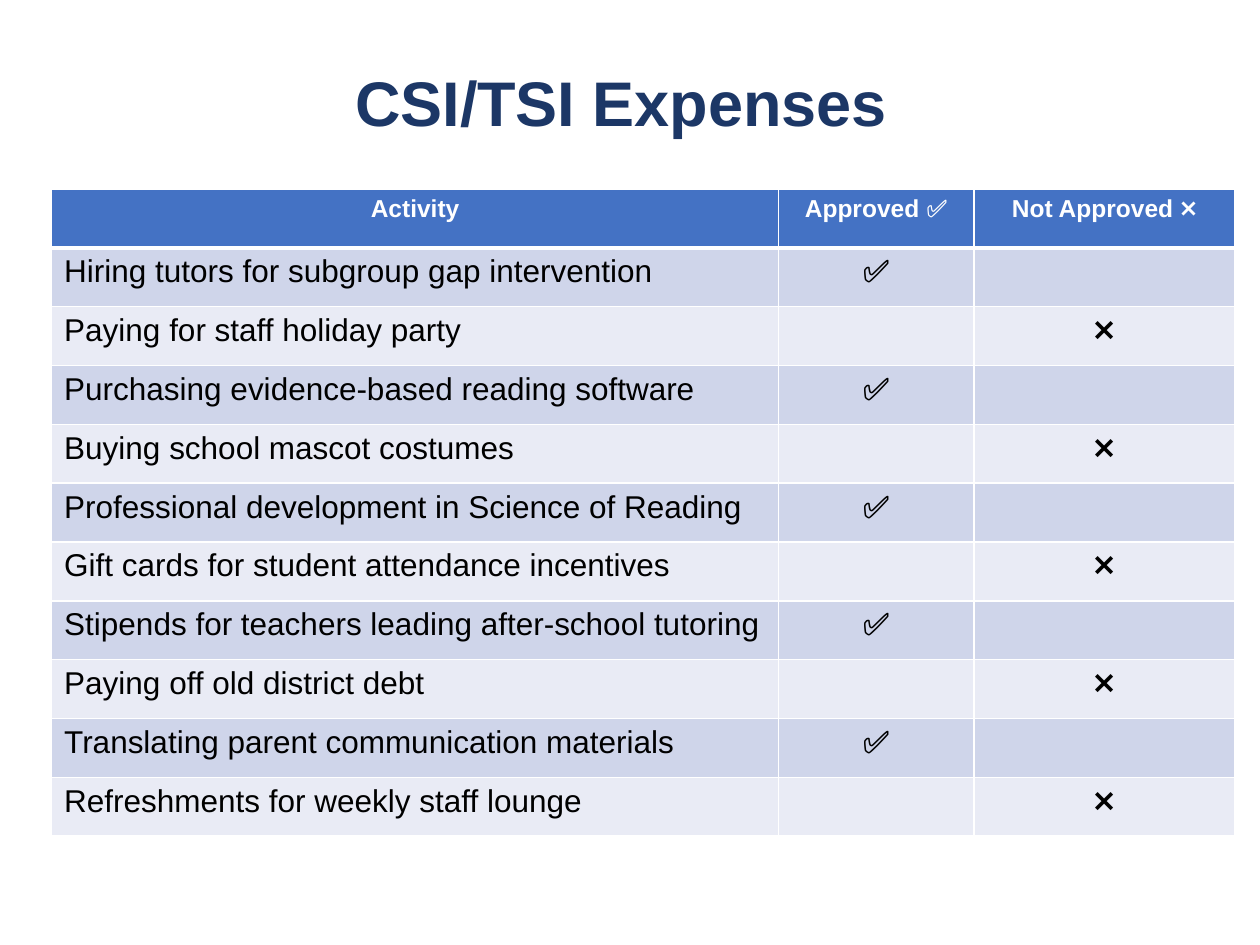
"""Build the CSI/TSI expenses slide with its approval table."""
from dataclasses import dataclass

import lxml.etree
import pptx
import pptx.dml.color
import pptx.enum.text
import pptx.oxml.ns
import pptx.util

Inches = pptx.util.Inches
Align = pptx.enum.text.PP_ALIGN


@dataclass(frozen=True)
class Theme:
    font: str = "Arial"
    title: str = "1C3766"
    header: str = "4472C4"
    bands: tuple[str, str] = ("CFD5EA", "E9EBF5")
    light: str = "FFFFFF"
    dark: str = "000000"
    title_size: int = 36
    header_size: int = 14
    body_size: int = 18
    thin_line: int = 1
    thick_line: int = 3


@dataclass(frozen=True)
class Expense:
    activity: str
    approved: bool


@dataclass(frozen=True)
class CellStyle:
    fill: str
    color: str
    size: int
    bold: bool
    top: int
    bottom: int


THEME = Theme()
HEADINGS = ("Activity", "Approved ✅", "Not Approved ❌")
COLUMN_WIDTHS = (5.77, 1.55, 2.07)
EXPENSES = (
    Expense("Hiring tutors for subgroup gap intervention", True),
    Expense("Paying for staff holiday party", False),
    Expense("Purchasing evidence-based reading software", True),
    Expense("Buying school mascot costumes", False),
    Expense("Professional development in Science of Reading", True),
    Expense("Gift cards for student attendance incentives", False),
    Expense("Stipends for teachers leading after-school tutoring", True),
    Expense("Paying off old district debt", False),
    Expense("Translating parent communication materials", True),
    Expense("Refreshments for weekly staff lounge", False),
)


def format_para(para, color: str, size: int, bold: bool, align) -> None:
    para.alignment = align
    para.font.name = THEME.font
    para.font.size = pptx.util.Pt(size)
    para.font.bold = bold
    para.font.color.rgb = pptx.dml.color.RGBColor.from_string(color)


def add_borders(cell, top: int, bottom: int) -> None:
    properties = cell._tc.get_or_add_tcPr()
    thin = THEME.thin_line
    for side, width in (("L", thin), ("R", thin), ("T", top), ("B", bottom)):
        line = lxml.etree.SubElement(
            properties, pptx.oxml.ns.qn(f"a:ln{side}"), w=str(pptx.util.Pt(width))
        )
        fill = lxml.etree.SubElement(line, pptx.oxml.ns.qn("a:solidFill"))
        lxml.etree.SubElement(fill, pptx.oxml.ns.qn("a:srgbClr"), val=THEME.light)


def draw_cell(cell, text: str, style: CellStyle, align) -> None:
    add_borders(cell, style.top, style.bottom)
    cell.fill.solid()
    cell.fill.fore_color.rgb = pptx.dml.color.RGBColor.from_string(style.fill)
    cell.text = text
    format_para(cell.text_frame.paragraphs[0], style.color, style.size, style.bold, align)


def draw_title(page, text: str) -> None:
    title = page.shapes.title
    title.left, title.top = Inches(0.69), Inches(0.52)
    title.width, title.height = Inches(8.62), Inches(1.23)
    title.text_frame.text = text
    title.text_frame.vertical_anchor = pptx.enum.text.MSO_ANCHOR.TOP
    para = title.text_frame.paragraphs[0]
    para.line_spacing = 0.9
    format_para(para, THEME.title, THEME.title_size, True, Align.CENTER)


def draw_expenses(page, expenses: tuple[Expense, ...]) -> None:
    table = page.shapes.add_table(
        len(expenses) + 1, len(HEADINGS),
        Inches(0.41), Inches(1.5), Inches(sum(COLUMN_WIDTHS)), Inches(5.14),
    ).table
    for column, width in zip(table.columns, COLUMN_WIDTHS):
        column.width = Inches(width)
    thin, thick = THEME.thin_line, THEME.thick_line
    header = CellStyle(THEME.header, THEME.light, THEME.header_size, True, thin, thick)
    for column, heading in enumerate(HEADINGS):
        draw_cell(table.cell(0, column), heading, header, Align.CENTER)
    for index, expense in enumerate(expenses):
        style = CellStyle(
            THEME.bands[index % 2], THEME.dark, THEME.body_size, False,
            thin if index else thick, thin,
        )
        marks = ("✅", "") if expense.approved else ("", "❌")
        for column, text in enumerate((expense.activity, *marks)):
            align = Align.CENTER if column else Align.LEFT
            draw_cell(table.cell(index + 1, column), text, style, align)


def main() -> None:
    deck = pptx.Presentation()
    deck.slide_width, deck.slide_height = Inches(10), Inches(7.5)
    page = deck.slides.add_slide(deck.slide_layouts.get_by_name("Title Only"))
    draw_title(page, "CSI/TSI Expenses ")
    draw_expenses(page, EXPENSES)
    deck.save("out.pptx")


if __name__ == "__main__":
    main()
